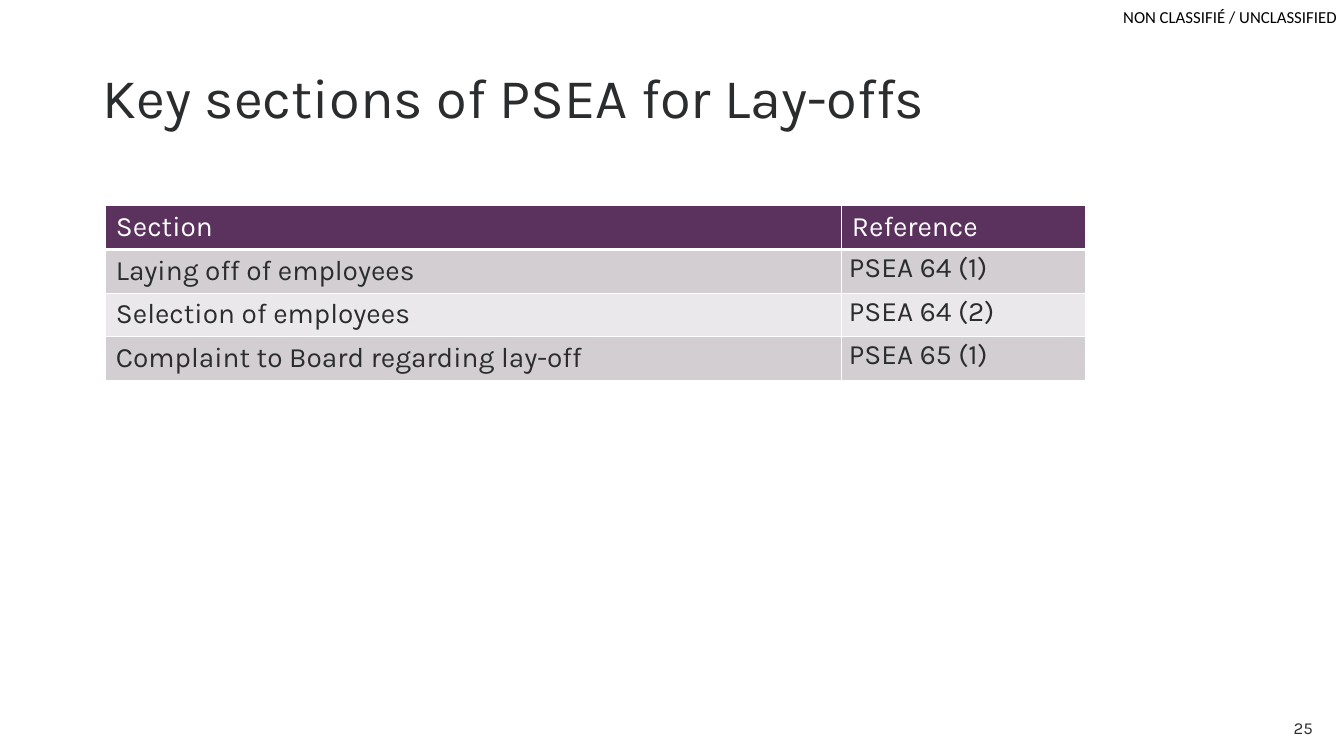
from dataclasses import dataclass

from lxml import etree
from pptx import Presentation
from pptx.dml.color import RGBColor
from pptx.enum.text import MSO_ANCHOR, PP_ALIGN
from pptx.oxml.ns import qn
from pptx.util import Inches, Pt

LEFT, RIGHT = PP_ALIGN.LEFT, PP_ALIGN.RIGHT
TOP, MIDDLE = MSO_ANCHOR.TOP, MSO_ANCHOR.MIDDLE

COLORS = {
    "ink": "2A2C2D",
    "black": "000000",
    "white": "FFFFFF",
    "header": "5B315E",
    "odd_row": "D2CED2",
    "even_row": "EAE8EA",
}
COLUMN_WIDTHS = (7.3, 2.42)
ROW_HEIGHT = 0.42


def color(name: str) -> RGBColor:
    return RGBColor.from_string(COLORS[name])


@dataclass
class Label:
    text: str
    left: float
    top: float
    width: float
    height: float
    size: int
    font: str = "Karla"
    ink: str = "ink"
    align: PP_ALIGN = LEFT
    anchor: MSO_ANCHOR = MIDDLE
    line_spacing: float = 1.0
    inset: tuple[float, float] = (0.1, 0.05)
    wrap: bool = True


@dataclass
class SectionRow:
    section: str
    reference: str


LABELS = [
    Label("NON CLASSIFIÉ / UNCLASSIFIED", 11.14, 0.07, 2.16, 0.2, 12, font="Calibri",
          ink="black", anchor=TOP, inset=(0, 0), wrap=False),
    Label("Key sections of PSEA for Lay-offs", 0.92, 0.4, 11.5, 1.2, 40, line_spacing=0.9),
    Label("25", 11.81, 7.02, 1.31, 0.4, 12, align=RIGHT),
]
HEADER = SectionRow("Section", "Reference")
ROWS = [
    SectionRow("Laying off of employees", "PSEA 64 (1)"),
    SectionRow("Selection of employees", "PSEA 64 (2)"),
    SectionRow("Complaint to Board regarding lay-off", "PSEA 65 (1)"),
]


def write(frame, text: str, *, size: int, font: str = "Karla", ink: str = "ink",
          align: PP_ALIGN = LEFT, line_spacing: float = 1.0, space_after: int = 0) -> None:
    para = frame.paragraphs[0]
    para.alignment = align
    para.line_spacing = line_spacing
    para.space_after = Pt(space_after)
    span = para.add_run()
    span.text = text
    span.font.size = Pt(size)
    span.font.name = font
    span.font.color.rgb = color(ink)


def add_label(page, label: Label) -> None:
    box = page.shapes.add_textbox(Inches(label.left), Inches(label.top),
                                  Inches(label.width), Inches(label.height))
    frame = box.text_frame
    frame.word_wrap = label.wrap
    frame.vertical_anchor = label.anchor
    across, down = label.inset
    frame.margin_left = frame.margin_right = Inches(across)
    frame.margin_top = frame.margin_bottom = Inches(down)
    write(frame, label.text, size=label.size, font=label.font, ink=label.ink,
          align=label.align, line_spacing=label.line_spacing)


def set_borders(cell, top: int, bottom: int) -> None:
    """Draw white borders; they come before the fill in the cell properties."""
    properties = cell._tc.get_or_add_tcPr()
    widths = {"a:lnL": 1, "a:lnR": 1, "a:lnT": top, "a:lnB": bottom}
    for position, (tag, width) in enumerate(widths.items()):
        line = etree.Element(qn(tag), w=str(Pt(width)))
        fill = etree.SubElement(line, qn("a:solidFill"))
        etree.SubElement(fill, qn("a:srgbClr"), val=COLORS["white"])
        properties.insert(position, line)


def add_section_table(page) -> None:
    rows = [HEADER, *ROWS]
    table = page.shapes.add_table(
        len(rows), len(COLUMN_WIDTHS), Inches(1.05), Inches(2.04),
        Inches(sum(COLUMN_WIDTHS)), Inches(ROW_HEIGHT * len(rows))).table
    for column, width in zip(table.columns, COLUMN_WIDTHS):
        column.width = Inches(width)

    for row_index, row in enumerate(rows):
        is_header = row_index == 0
        stripe = "header" if is_header else "odd_row" if row_index % 2 else "even_row"
        for column_index, text in enumerate((row.section, row.reference)):
            cell = table.cell(row_index, column_index)
            cell.fill.solid()
            cell.fill.fore_color.rgb = color(stripe)
            set_borders(cell, top=3 if row_index == 1 else 1, bottom=3 if is_header else 1)
            is_reference = column_index == 1 and not is_header
            if is_reference:
                cell.margin_left = cell.margin_right = Inches(0.07)
                cell.margin_top = cell.margin_bottom = 0
            write(cell.text_frame, text, size=20, ink="white" if is_header else "ink",
                  line_spacing=1.07 if is_reference else 1.0,
                  space_after=8 if is_reference else 0)


def main() -> None:
    deck = Presentation()
    deck.slide_width, deck.slide_height = Inches(13.33), Inches(7.5)
    page = deck.slides.add_slide(deck.slide_layouts[6])
    page.background.fill.solid()
    page.background.fill.fore_color.rgb = color("white")

    # Classification mark, title and page number
    for label in LABELS:
        add_label(page, label)

    # Sections and their references
    add_section_table(page)

    deck.save("out.pptx")


if __name__ == "__main__":
    main()
